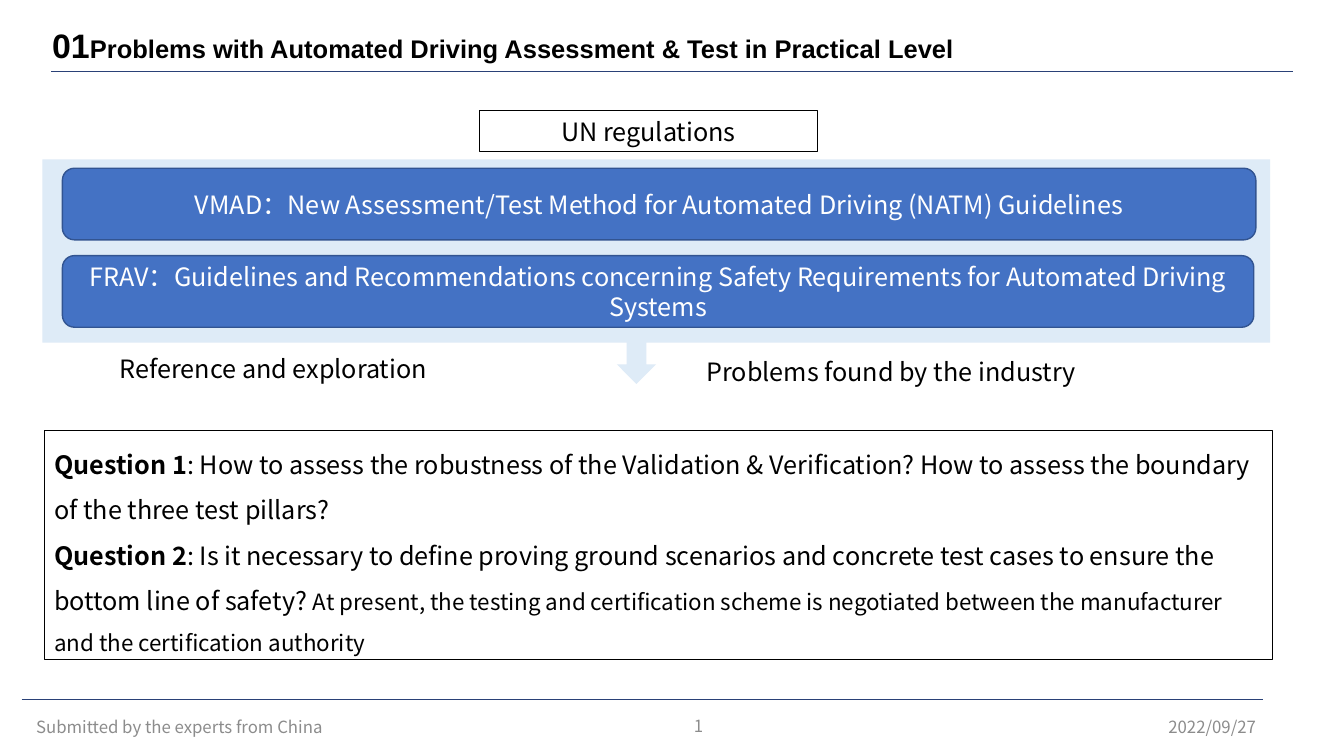
from lxml import etree
from pptx import Presentation
from pptx.dml.color import RGBColor
from pptx.enum.shapes import MSO_CONNECTOR, MSO_SHAPE
from pptx.enum.text import MSO_ANCHOR, PP_ALIGN
from pptx.oxml.ns import qn
from pptx.util import Pt

RECTANGLE = MSO_SHAPE.RECTANGLE
ROUNDED = MSO_SHAPE.ROUNDED_RECTANGLE
DOWN_ARROW = MSO_SHAPE.DOWN_ARROW
STRAIGHT = MSO_CONNECTOR.STRAIGHT
LEFT, CENTER, RIGHT = PP_ALIGN.LEFT, PP_ALIGN.CENTER, PP_ALIGN.RIGHT
TOP, MIDDLE = MSO_ANCHOR.TOP, MSO_ANCHOR.MIDDLE

BODY_FONT, TITLE_FONT = "Noto Sans CJK SC", "Arial"
BLACK, WHITE, GREY = "000000", "FFFFFF", "8C8C8C"
NAVY, BLUE, BLUE_EDGE, PALE = "2A4177", "4472C4", "325491", "DEEBF7"


def color(hex_text):
    return RGBColor.from_string(hex_text)


def style_span(span, size, ink=BLACK, bold=False, font=BODY_FONT):
    span.font.name = font
    span.font.size = Pt(size)
    span.font.bold = bold
    span.font.color.rgb = color(ink)
    east_asian = etree.SubElement(span.font._element, qn("a:ea"))
    east_asian.set("typeface", font)


def write(box, text, size, ink=BLACK, align=CENTER, anchor=MIDDLE):
    """Fill a box with one paragraph in one style."""
    frame = box.text_frame
    frame.word_wrap = True
    frame.vertical_anchor = anchor
    frame.text = text
    para = frame.paragraphs[0]
    para.alignment = align
    style_span(para.runs[0], size, ink)


def add_spans(para, spans):
    """Append (text, size, bold, font) spans to a paragraph."""
    for text, size, bold, font in spans:
        span = para.add_run()
        span.text = text
        style_span(span, size, bold=bold, font=font)


def add_box(page, kind, left, top, width, height, fill=None, edge=None, edge_width=0.75):
    box = page.shapes.add_shape(kind, Pt(left), Pt(top), Pt(width), Pt(height))
    box.shadow.inherit = False
    if fill:
        box.fill.solid()
        box.fill.fore_color.rgb = color(fill)
    else:
        box.fill.background()
    if edge:
        box.line.color.rgb = color(edge)
        box.line.width = Pt(edge_width)
    else:
        box.line.fill.background()
    return box


def add_label(page, left, top, width, text, size, ink=BLACK, align=LEFT, anchor=TOP):
    label = page.shapes.add_textbox(Pt(left), Pt(top), Pt(width), Pt(29))
    write(label, text, size, ink, align, anchor)


def add_rule(page, left, top, width):
    rule = page.shapes.add_connector(STRAIGHT, Pt(left), Pt(top), Pt(left + width), Pt(top))
    rule.line.color.rgb = color(NAVY)
    rule.line.width = Pt(0.5)
    etree.SubElement(rule._element.spPr, qn("a:effectLst"))


def add_title(page, number, text):
    title = page.shapes.add_textbox(Pt(30.2), Pt(0), Pt(667.4), Pt(68))
    frame = title.text_frame
    frame.word_wrap = True
    frame.margin_top = Pt(17.4)
    add_spans(frame.paragraphs[0], [(number, 24.2, True, TITLE_FONT),
                                    (text, 18.2, True, TITLE_FONT)])


def add_questions(page, questions):
    """Draw the framed list; each question is (heading, text, smaller remark)."""
    frame = add_box(page, RECTANGLE, 31.7, 307.4, 877, 164, edge=BLACK).text_frame
    frame.word_wrap = True
    frame.vertical_anchor = MIDDLE
    for index, (heading, text, remark) in enumerate(questions):
        para = frame.add_paragraph() if index else frame.paragraphs[0]
        para.alignment = LEFT
        para.line_spacing = 1.5
        spans = [(heading, 18, True, BODY_FONT), (text, 18, False, BODY_FONT)]
        if remark:
            spans.append((remark, 16, False, BODY_FONT))
        add_spans(para, spans)


def add_guideline(page, top, width, text):
    bar = add_box(page, ROUNDED, 44.6, top, width, 51.1, BLUE, BLUE_EDGE, 1)
    write(bar, text, 18, WHITE)


def main():
    deck = Presentation()
    deck.slide_width, deck.slide_height = Pt(960), Pt(540)
    page = deck.slides.add_slide(deck.slide_layouts[6])

    add_rule(page, 36.7, 51.1, 887)
    add_rule(page, 15.5, 499.7, 887)
    add_title(page, "01", "Problems with Automated Driving Assessment & Test in Practical Level")

    add_questions(page, [
        ("Question 1",
         ": How to assess the robustness of the Validation & Verification? "
         "How to assess the boundary of the three test pillars?", ""),
        ("Question 2",
         ": Is it necessary to define proving ground scenarios and concrete "
         "test cases to ensure the bottom line of safety? ",
         "At present, the testing and certification scheme is negotiated between "
         "the manufacturer and the certification authority"),
    ])

    add_box(page, RECTANGLE, 30.2, 113.8, 877, 131, PALE)
    add_guideline(page, 120.2, 852.5,
                  "VMAD：New Assessment/Test Method for Automated Driving (NATM) Guidelines")
    add_guideline(page, 182.6, 851,
                  "FRAV：Guidelines and Recommendations concerning Safety Requirements "
                  "for Automated Driving Systems")
    regulations = add_box(page, RECTANGLE, 342.7, 79.2, 241.2, 29, WHITE, BLACK)
    write(regulations, "UN regulations", 18)
    add_box(page, DOWN_ARROW, 440.6, 244.1, 28.1, 30.2, PALE)
    add_label(page, 78.5, 249.1, 336, "Reference and exploration", 18)
    add_label(page, 497.5, 250.6, 366, "Problems found by the industry", 18)

    add_label(page, 18.7, 504.7, 324, "Submitted by the experts from China", 12, GREY, LEFT, MIDDLE)
    add_label(page, 391, 504, 216, "1", 12, GREY, CENTER, MIDDLE)
    add_label(page, 688.3, 504.7, 216, "2022/09/27", 12, GREY, RIGHT, MIDDLE)

    deck.save("out.pptx")


if __name__ == "__main__":
    main()
